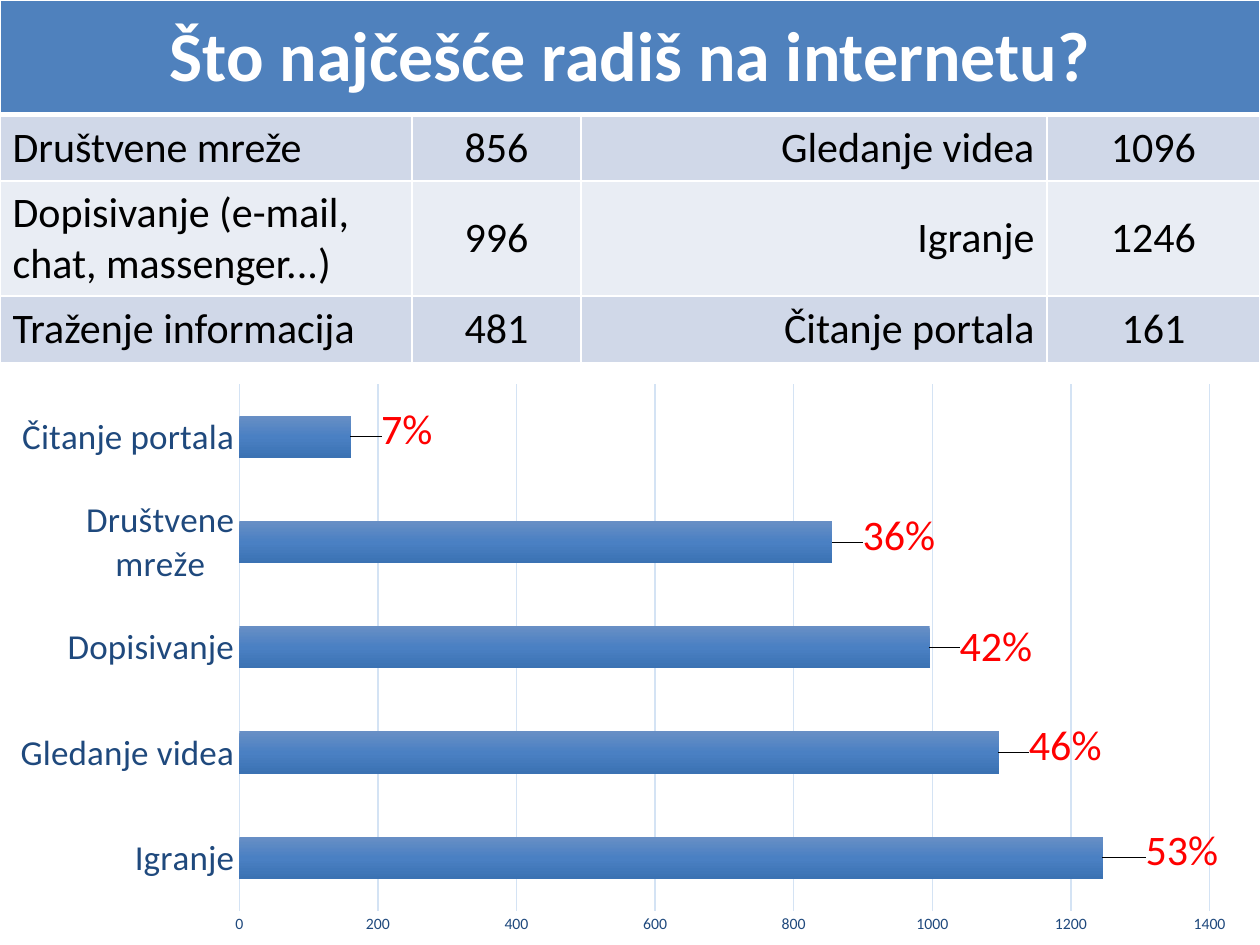
"""Build a survey slide with a table of answers and a bar chart."""
from copy import deepcopy
from dataclasses import dataclass

from lxml import etree
from pptx import Presentation
from pptx.chart.data import CategoryChartData
from pptx.dml.color import RGBColor
from pptx.enum.chart import XL_CHART_TYPE, XL_LABEL_POSITION, XL_TICK_MARK
from pptx.enum.text import MSO_ANCHOR, PP_ALIGN
from pptx.oxml.ns import qn
from pptx.util import Pt

BAR = XL_CHART_TYPE.BAR_CLUSTERED
OUTSIDE_END = XL_LABEL_POSITION.OUTSIDE_END
NO_TICK = XL_TICK_MARK.NONE
MIDDLE = MSO_ANCHOR.MIDDLE
LEFT, CENTER, RIGHT = PP_ALIGN.LEFT, PP_ALIGN.CENTER, PP_ALIGN.RIGHT

TITLE = "Što najčešće radiš na internetu?"
ANSWERS = [
    ("Društvene mreže", "856", "Gledanje videa", "1096"),
    ("Dopisivanje (e-mail, chat, massenger...)", "996", "Igranje", "1246"),
    ("Traženje informacija", "481", "Čitanje portala", "161"),
]
COLUMN_WIDTHS = (235.5, 96.5, 266.4, 121.6)
COLUMN_ALIGNS = (LEFT, CENTER, RIGHT, CENTER)
TITLE_HEIGHT, ROW_HEIGHT = 65.5, 38

ACTIVITIES = [
    ("Igranje", 1246, "53%", (0.03, -0.01)),
    ("Gledanje videa", 1096, "46%", (0.02, -0.01)),
    ("Dopisivanje", 996, "42%", (0.02, 0)),
    ("Društvene mreže", 856, "36%", (0.02, -0.01)),
    ("Čitanje portala", 161, "7%", (0.02, -0.01)),
]
PLOT_AREA = {"x": 0.19, "y": 0.02, "w": 0.77, "h": 0.92}


@dataclass(frozen=True)
class Theme:
    """Colours, font and type sizes of the slide."""
    font: str = "Calibri"
    header: str = "4F81BD"
    bands: tuple = ("D0D8E8", "E9EDF4")
    light: str = "FFFFFF"
    dark: str = "000000"
    axis: str = "1F497D"
    grid: str = "D4E3F4"
    share: str = "FF0000"
    bar: tuple = ("688FC5", "4A80C3", "3B72B3")
    title_size: int = 40
    body_size: int = 24
    category_size: int = 20
    value_size: int = 9


class SlideBuilder:
    """Holds the theme and the slide being filled."""

    def __init__(self, slide, theme):
        self.slide = slide
        self.theme = theme

    def style_font(self, font, size, color, bold=False):
        """Apply the theme font with a size and colour."""
        font.name, font.size, font.bold = self.theme.font, Pt(size), bold
        font.color.rgb = RGBColor.from_string(color)

    def border_cell(self, cell, bottom_width):
        """Draw light borders on all four sides of a cell."""
        properties = cell._tc.get_or_add_tcPr()
        for side, width in (("L", 1), ("R", 1), ("T", 1), ("B", bottom_width)):
            line = etree.SubElement(properties, qn(f"a:ln{side}"), w=str(Pt(width)))
            fill = etree.SubElement(line, qn("a:solidFill"))
            etree.SubElement(fill, qn("a:srgbClr"), val=self.theme.light)

    def fill_cell(self, cell, text, align, fill, size, color, bold=False, bottom_width=1):
        """Write and style one table cell."""
        cell.text_frame.text = text
        cell.vertical_anchor = MIDDLE
        self.border_cell(cell, bottom_width)
        cell.fill.solid()
        cell.fill.fore_color.rgb = RGBColor.from_string(fill)
        paragraph = cell.text_frame.paragraphs[0]
        paragraph.alignment = align
        for run in paragraph.runs:
            self.style_font(run.font, size, color, bold)

    def add_answer_table(self, title, answers):
        """Add the table with its title across all columns."""
        theme = self.theme
        height = TITLE_HEIGHT + ROW_HEIGHT * len(answers)
        table = self.slide.shapes.add_table(
            len(answers) + 1, len(COLUMN_WIDTHS), Pt(0), Pt(0), Pt(720), Pt(height)
        ).table
        for column, width in zip(table.columns, COLUMN_WIDTHS):
            column.width = Pt(width)
        for index, row in enumerate(table.rows):
            row.height = Pt(ROW_HEIGHT if index else TITLE_HEIGHT)
        table.cell(0, 0).merge(table.cell(0, len(COLUMN_WIDTHS) - 1))
        for column in range(len(COLUMN_WIDTHS)):
            self.fill_cell(table.cell(0, column), "" if column else title, CENTER,
                           theme.header, theme.title_size, theme.light, True, 3)
        for row, answer in enumerate(answers, 1):
            band = theme.bands[(row - 1) % 2]
            for column, (text, align) in enumerate(zip(answer, COLUMN_ALIGNS)):
                self.fill_cell(table.cell(row, column), text, align, band,
                               theme.body_size, theme.dark)

    def style_axis(self, axis, size):
        """Remove the ticks and style the labels of an axis."""
        axis.major_tick_mark = axis.minor_tick_mark = NO_TICK
        self.style_font(axis.tick_labels.font, size, self.theme.axis)

    def style_line(self, line):
        """Give an axis or grid line the grid style."""
        line.width = Pt(0.75)
        line.color.rgb = RGBColor.from_string(self.theme.grid)

    def place(self, layout, **values):
        """Write a manual chart layout."""
        manual = etree.SubElement(layout, qn("c:manualLayout"))
        for name, value in values.items():
            etree.SubElement(manual, qn(f"c:{name}"), val=str(value))

    def fill_bars(self, series):
        """Shade the bars from top to bottom."""
        fill = series.format.fill
        fill.gradient()
        fill.gradient_angle = 270
        stops = series._element.find(".//" + qn("a:gsLst"))
        stops.append(deepcopy(stops[-1]))
        for stop, position, color in zip(fill.gradient_stops, (0, 0.5, 1), self.theme.bar):
            stop.position = position
            stop.color.rgb = RGBColor.from_string(color)

    def add_share_label(self, point, share, offset):
        """Label a bar with its share, moved by an offset."""
        label = point.data_label
        label.text_frame.text = share
        for run in label.text_frame.paragraphs[0].runs:
            self.style_font(run.font, self.theme.body_size, self.theme.share)
        label.position = OUTSIDE_END
        element = label._dLbl
        layout = element.find(qn("c:layout"))
        if layout is None:
            layout = etree.Element(qn("c:layout"))
            element.find(qn("c:idx")).addnext(layout)
        self.place(layout, x=offset[0], y=offset[1])

    def add_activity_chart(self, left, top, width, height, activities):
        """Add the bar chart of activities."""
        theme = self.theme
        data = CategoryChartData()
        data.categories = [activity[0] for activity in activities]
        data.add_series("Series 1", [activity[1] for activity in activities])
        chart = self.slide.shapes.add_chart(
            BAR, Pt(left), Pt(top), Pt(width), Pt(height), data
        ).chart
        self.style_font(chart.font, 10, theme.dark)
        chart.has_legend = chart.has_title = False
        self.style_axis(chart.category_axis, theme.category_size)
        self.style_line(chart.category_axis.format.line)
        values = chart.value_axis
        self.style_axis(values, theme.value_size)
        values.minimum_scale, values.maximum_scale, values.major_unit = 0, 1400, 200
        values.format.line.fill.background()
        self.style_line(values.major_gridlines.format.line)
        plot = chart.plots[0]
        plot.gap_width, plot.vary_by_categories = 150, False
        plot_area = plot._element.getparent()
        layout = plot_area.find(qn("c:layout"))
        if layout is None:
            layout = etree.Element(qn("c:layout"))
            plot_area.insert(0, layout)
        self.place(layout, layoutTarget="inner", xMode="edge", yMode="edge", **PLOT_AREA)
        series = plot.series[0]
        self.fill_bars(series)
        labels = series.data_labels
        labels.show_value, labels.position = True, OUTSIDE_END
        self.style_font(labels.font, theme.body_size, theme.share, True)
        for index, (_, _, share, offset) in enumerate(activities):
            self.add_share_label(series.points[index], share, offset)


def main():
    """Create and save the presentation."""
    presentation = Presentation()
    presentation.slide_width, presentation.slide_height = Pt(720), Pt(540)
    slide = presentation.slides.add_slide(presentation.slide_layouts[6])
    builder = SlideBuilder(slide, Theme())
    builder.add_answer_table(TITLE, ANSWERS)
    builder.add_activity_chart(0, 213, 720, 327, ACTIVITIES)
    presentation.save("out.pptx")


if __name__ == "__main__":
    main()
